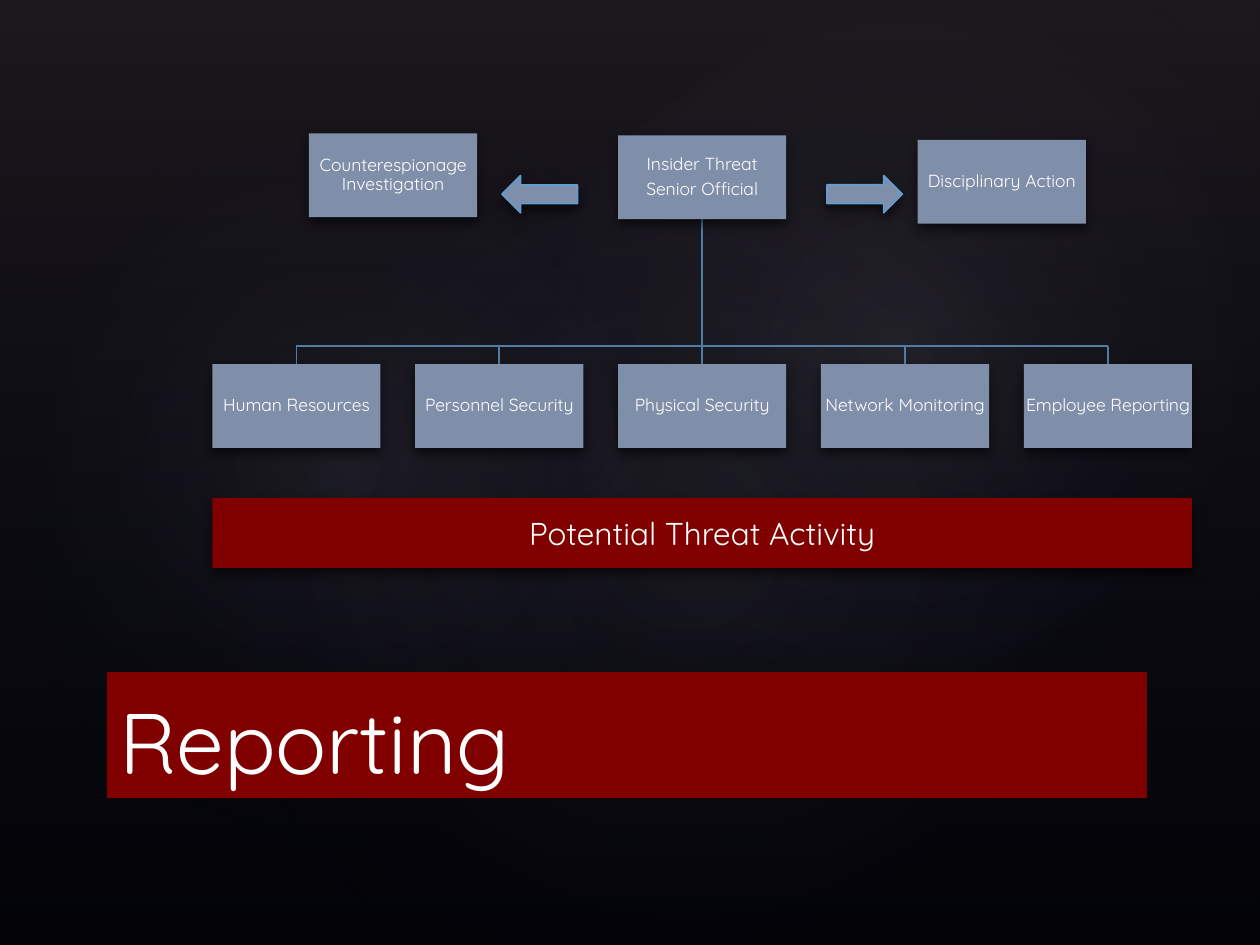
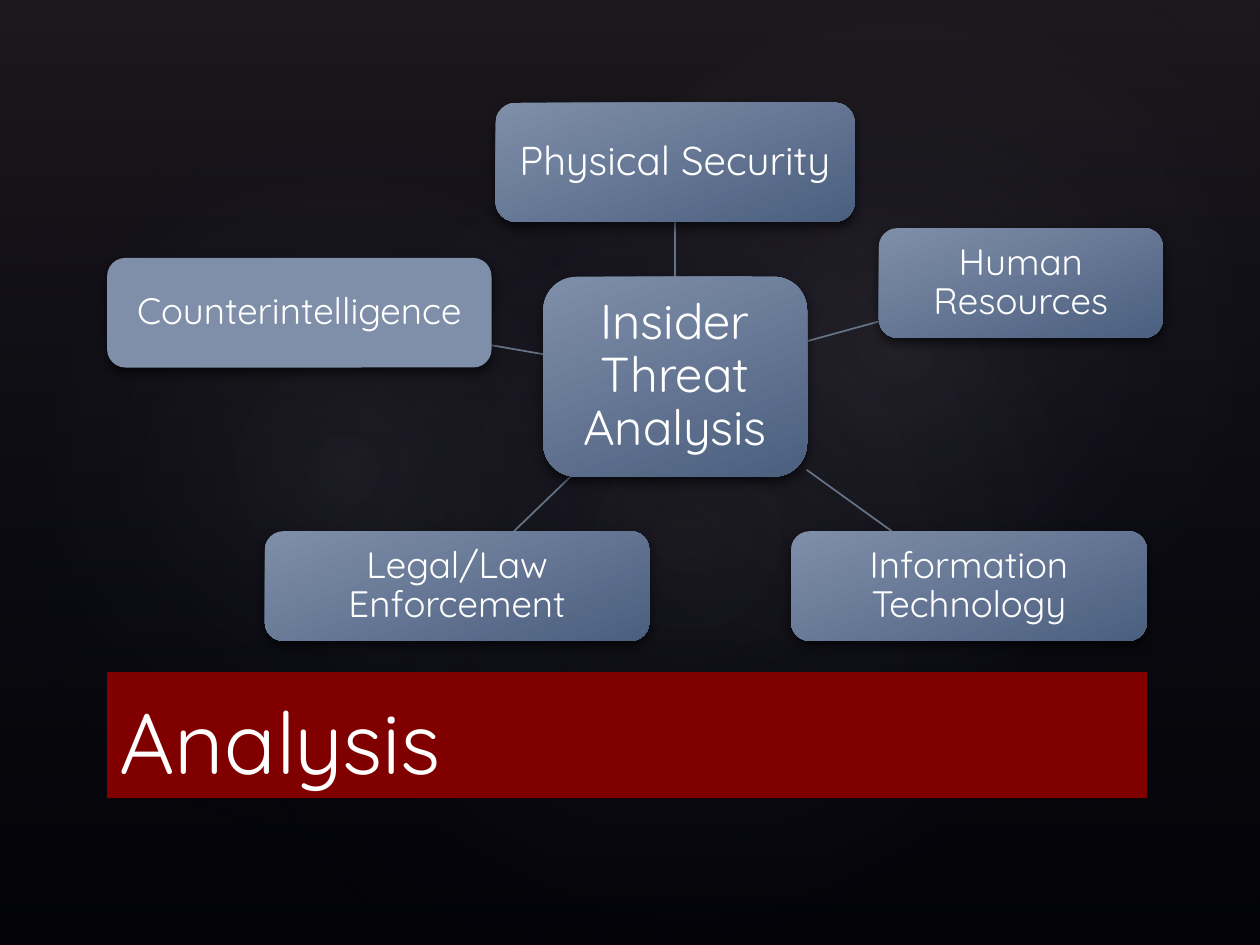
from dataclasses import dataclass

from lxml import etree
from pptx import Presentation
from pptx.dml.color import RGBColor
from pptx.enum.shapes import MSO_CONNECTOR as Link, MSO_SHAPE as Kind
from pptx.enum.text import MSO_ANCHOR as Anchor, MSO_AUTO_SIZE as Fit, PP_ALIGN as Align
from pptx.oxml import parse_xml
from pptx.oxml.ns import nsdecls, qn
from pptx.util import Cm, Pt

FONT = "Quicksand"
WHITE, BLACK = "FFFFFF", "000000"
STEEL, SLATE, RED = "7F8FA9", "4B5F7F", "800000"
BLUE, EDGE, SPOKE = "4E7EA7", "629DD1", "667387"
NAVY, PLUM, HAZE = "242852", "504652", "C4BCC6"


@dataclass
class Box:
    """Place and size in centimetres."""
    left: float
    top: float
    width: float
    height: float

    @property
    def mid(self) -> float:
        return self.left + self.width / 2

    @property
    def base(self) -> float:
        return self.top + self.height


@dataclass
class Stop:
    """Gradient stop, position and opacity in percent."""
    pos: int
    color: str
    alpha: int = 100


@dataclass
class Glow:
    box: Box
    turn: float
    alpha: int


@dataclass
class Node:
    text: str
    box: Box
    size: float
    pad: float = 0.15
    flat: bool = False


# Helpers
def color(code: str) -> RGBColor:
    return RGBColor.from_string(code)


def write(shape, text: str, *, size: float, align=Align.CENTER, anchor=Anchor.MIDDLE,
          pad: tuple[float, float] = (0.25, 0.13), lead: float = 1.0,
          after: float = 0) -> None:
    frame = shape.text_frame
    frame.word_wrap, frame.auto_size = True, Fit.NONE
    frame.vertical_anchor = anchor
    frame.margin_left = frame.margin_right = Cm(pad[0])
    frame.margin_top = frame.margin_bottom = Cm(pad[1])
    frame.text = text
    for para in frame.paragraphs:
        para.alignment, para.line_spacing = align, lead
        para.space_before, para.space_after = Pt(0), Pt(after)
        for run in para.runs:
            run.font.name, run.font.size = FONT, Pt(size)
            run.font.color.rgb = color(WHITE)


def blend(shape, stops: list[Stop], angle: int | None = None) -> None:
    """Linear gradient at an angle, or a round one without it."""
    marks = "".join(
        f'<a:gs pos="{s.pos * 1000}"><a:srgbClr val="{s.color}">'
        f'<a:alpha val="{s.alpha * 1000}"/></a:srgbClr></a:gs>' for s in stops)
    if angle is None:
        form = ('<a:path path="circle"><a:fillToRect l="50000" t="50000" '
                'r="50000" b="50000"/></a:path>')
    else:
        form = f'<a:lin ang="{angle * 60000}" scaled="0"/>'
    shape.fill.background()
    props = shape.element.spPr
    props.replace(props.find(qn("a:noFill")), parse_xml(
        f'<a:gradFill {nsdecls("a")} rotWithShape="1"><a:gsLst>{marks}</a:gsLst>{form}</a:gradFill>'))


def draw(slide, kind, box: Box, fill: str | None = None, line: str | None = None,
         shade: bool = True):
    shape = slide.shapes.add_shape(
        kind, Cm(box.left), Cm(box.top), Cm(box.width), Cm(box.height))
    shape.shadow.inherit = False
    if fill:
        shape.fill.solid()
        shape.fill.fore_color.rgb = color(fill)
    if line:
        shape.line.color.rgb, shape.line.width = color(line), Pt(1)
    else:
        shape.line.fill.background()
    if shade:
        shape.element.spPr.find(qn("a:effectLst")).append(parse_xml(
            f'<a:outerShdw {nsdecls("a")} blurRad="{Pt(6)}" dist="{Pt(3)}" dir="5400000" '
            f'rotWithShape="0"><a:srgbClr val="{BLACK}"><a:alpha val="60000"/></a:srgbClr>'
            '</a:outerShdw>'))
    return shape


def join(slide, x1: float, y1: float, x2: float, y2: float, tint: str) -> None:
    line = slide.shapes.add_connector(Link.STRAIGHT, Cm(x1), Cm(y1), Cm(x2), Cm(y2))
    line.line.color.rgb, line.line.width = color(tint), Pt(1)
    etree.SubElement(line.element.spPr, qn("a:effectLst"))


# Shared backdrop and title
GLOWS = [
    Glow(Box(3.81, 2.9, 20.12, 15.85), 328.7, 7),
    Glow(Box(-0.76, 3.25, 15.39, 12.45), 294.3, 8),
    Glow(Box(9.09, 0.33, 18.01, 13.21), 328.7, 8),
]


def dress(layout, slide) -> None:
    """Draw the backdrop, then move it to the layout."""
    veil = draw(slide, Kind.RECTANGLE, Box(0, 0, 25.4, 19.05), shade=False)
    blend(veil, [Stop(0, PLUM, 36), Stop(100, NAVY, 10)], 90)
    parts = [veil]
    for glow in GLOWS:
        disc = draw(slide, Kind.OVAL, glow.box, shade=False)
        disc.rotation = glow.turn
        blend(disc, [Stop(0, HAZE, glow.alpha), Stop(58, NAVY, 0)])
        parts.append(disc)
    for rank, part in enumerate(parts):
        part.element.xpath(".//p:cNvPr")[0].set("id", str(100 + rank))
        layout.shapes.element.insert(2 + rank, part.element)


def head(slide, text: str) -> None:
    title = slide.shapes.title
    title.left, title.top = Cm(2.16), Cm(13.55)
    title.width, title.height = Cm(20.96), Cm(2.54)
    title.fill.solid()
    title.fill.fore_color.rgb = color(RED)
    write(title, text, size=49, align=Align.LEFT, anchor=Anchor.BOTTOM)


# Slide 1: reporting chain
UNITS = ["Human Resources", "Personnel Security", "Physical Security",
         "Network Monitoring", "Employee Reporting"]
LEFT, STEP, ROW, BUS = 4.28, 4.09, 7.34, 6.98


def card(text: str, left: float, top: float) -> Node:
    return Node(text, Box(left, top, 3.39, 1.69), 10, 0.02, True)


def place(slide, kind, node: Node) -> None:
    shape = draw(slide, kind, node.box, STEEL)
    if not node.flat:
        blend(shape, [Stop(0, STEEL), Stop(100, SLATE)], 69)
    write(shape, node.text, size=node.size, pad=(node.pad, node.pad),
          lead=0.9, after=0.35 * node.size)


def report(slide) -> None:
    head(slide, "Reporting")
    chief = card("Insider Threat\nSenior Official", LEFT + 2 * STEP, 2.73)
    units = [card(name, LEFT + i * STEP, ROW) for i, name in enumerate(UNITS)]

    join(slide, chief.box.mid, chief.box.base, chief.box.mid, BUS, BLUE)
    join(slide, units[0].box.mid, BUS, units[-1].box.mid, BUS, BLUE)
    for unit in units:
        join(slide, unit.box.mid, BUS, unit.box.mid, ROW, BLUE)

    sides = [card("Disciplinary Action", 18.5, 2.82),
             card("Counterespionage Investigation", 6.23, 2.69)]
    for node in [chief, *units, *sides]:
        place(slide, Kind.RECTANGLE, node)

    band = draw(slide, Kind.RECTANGLE, Box(LEFT, 10.04, 19.75, 1.41), RED)
    write(band, "Potential Threat Activity", size=18)
    for left, turn in [(16.67, 0), (10.12, 180)]:
        arrow = draw(slide, Kind.RIGHT_ARROW, Box(left, 3.54, 1.52, 0.75), STEEL, EDGE)
        arrow.rotation = turn


# Slide 2: sources around the analysis
NODES = [
    Node("Insider Threat Analysis", Box(10.95, 5.58, 5.32, 4.03), 28, 0.2),
    Node("Physical Security", Box(9.99, 2.07, 7.24, 2.4), 23),
    Node("Human Resources", Box(17.72, 4.6, 5.72, 2.21), 21),
    Node("Information Technology", Box(15.95, 10.71, 7.17, 2.21), 21),
    Node("Legal/Law Enforcement", Box(5.34, 10.71, 7.75, 2.21), 21),
    Node("Counterintelligence", Box(2.16, 5.2, 7.75, 2.21), 21, flat=True),
]
SPOKES = [
    (13.61, 5.58, 13.61, 4.47),
    (16.26, 6.88, 17.72, 6.48),
    (16.26, 9.47, 17.98, 10.71),
    (11.51, 9.6, 10.36, 10.71),
    (10.95, 7.14, 9.91, 6.96),
]


def study(slide) -> None:
    head(slide, "Analysis")
    for ends in SPOKES:
        join(slide, *ends, SPOKE)
    for node in NODES:
        place(slide, Kind.ROUNDED_RECTANGLE, node)


def main() -> None:
    deck = Presentation()
    deck.slide_width, deck.slide_height = Cm(25.4), Cm(19.05)
    back = deck.slide_master.background.fill
    back.solid()
    back.fore_color.rgb = color(BLACK)
    layout = deck.slide_layouts[5]
    first, second = (deck.slides.add_slide(layout) for _ in range(2))
    dress(layout, first)
    report(first)
    study(second)
    deck.save("out.pptx")


if __name__ == "__main__":
    main()
